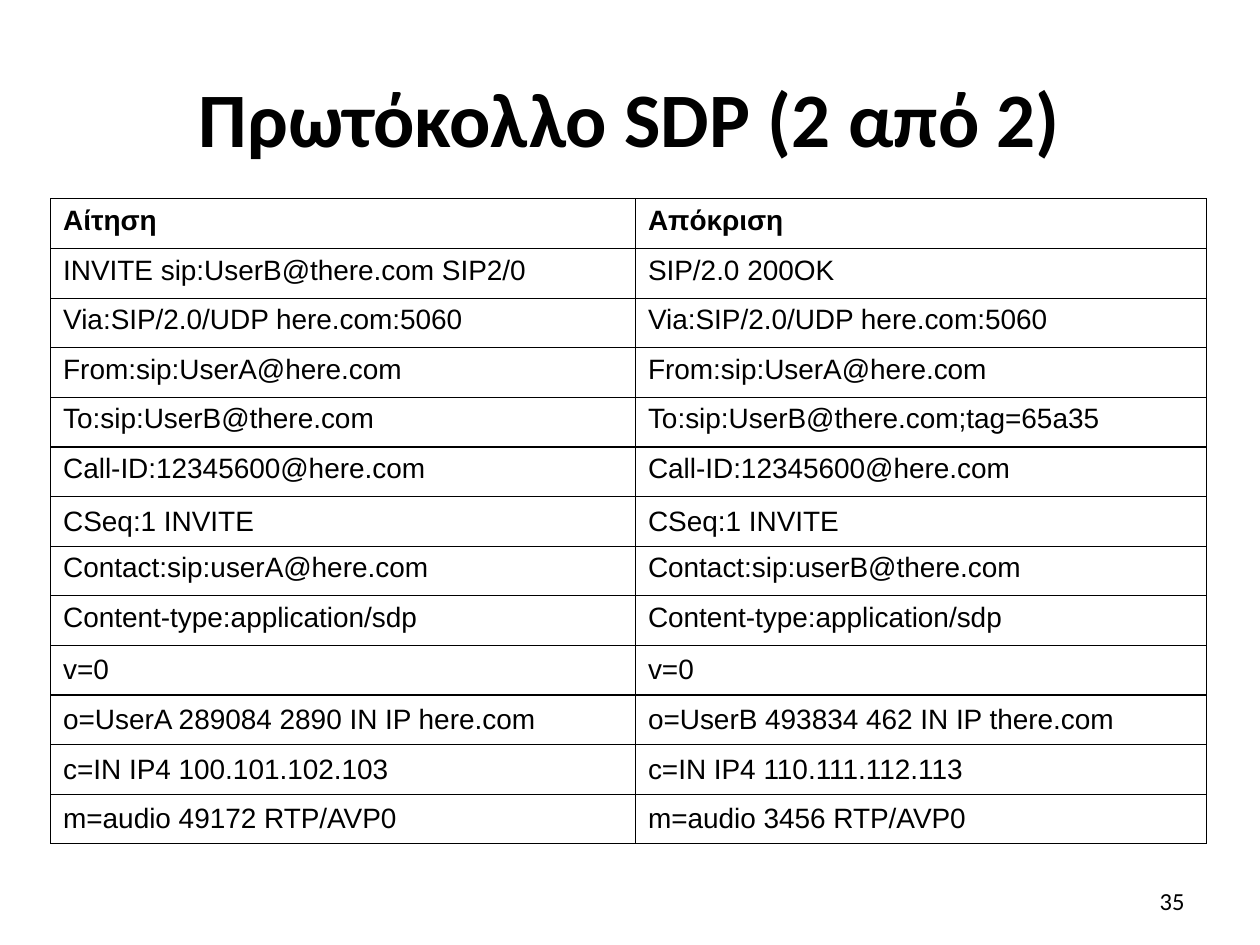
from lxml import etree
from pptx import Presentation
from pptx import util as u
from pptx.dml import color
from pptx.enum import text
from pptx.oxml import ns

BLACK = color.RGBColor(0, 0, 0)
WHITE = color.RGBColor(255, 255, 255)

TITLE = "Πρωτόκολλο SDP (2 από 2)"
PAGE_NUMBER = "35"
HEADER = ("Αίτηση", "Απόκριση")
MESSAGES = [
    ("INVITE sip:UserB@there.com SIP2/0", "SIP/2.0 200OK"),
    ("Via:SIP/2.0/UDP here.com:5060", "Via:SIP/2.0/UDP here.com:5060"),
    ("From:sip:UserA@here.com", "From:sip:UserA@here.com"),
    ("To:sip:UserB@there.com", "To:sip:UserB@there.com;tag=65a35"),
    ("Call-ID:12345600@here.com", "Call-ID:12345600@here.com"),
    ("CSeq:1 INVITE", "CSeq:1 INVITE"),
    ("Contact:sip:userA@here.com", "Contact:sip:userB@there.com"),
    ("Content-type:application/sdp", "Content-type:application/sdp"),
    ("v=0", "v=0"),
    ("o=UserA 289084 2890 IN IP here.com", "o=UserB 493834 462 IN IP there.com"),
    ("c=IN IP4 100.101.102.103", "c=IN IP4 110.111.112.113"),
    ("m=audio 49172 RTP/AVP0", "m=audio 3456 RTP/AVP0"),
]
ROWS = [HEADER] + MESSAGES
CENTRED_ROWS = {6, 9, 10, 11, 12}
COLUMN_WIDTHS = (11.79, 11.51)
ROW_HEIGHT = 1
INDENT = 0.95

TITLE_FONT = {"name": "Calibri", "size": u.Pt(44), "bold": True}
NUMBER_FONT = {"name": "Calibri", "size": u.Pt(14), "bold": False}
HEADER_FONT = {"name": "Arial", "size": u.Pt(16), "bold": True}
CELL_FONT = HEADER_FONT | {"bold": False}


def write(frame, content, font, align, anchor):
    frame.word_wrap = True
    frame.vertical_anchor = anchor
    para = frame.paragraphs[0]
    para.alignment = align
    span = para.add_run()
    span.text = content
    for name, value in font.items():
        setattr(span.font, name, value)
    span.font.color.rgb = BLACK
    return para


def place(box, left, top, width, height):
    for name, value in zip(("left", "top", "width", "height"), (left, top, width, height)):
        setattr(box, name, u.Cm(value))


def add_borders(cell):
    properties = cell._tc.get_or_add_tcPr()
    for side in ("a:lnL", "a:lnR", "a:lnT", "a:lnB"):
        line = etree.SubElement(properties, ns.qn(side), w=str(u.Pt(0.75)))
        fill = etree.SubElement(line, ns.qn("a:solidFill"))
        etree.SubElement(fill, ns.qn("a:srgbClr"), val=str(BLACK))


def add_message_table(page):
    frame = page.shapes.add_table(
        len(ROWS), len(HEADER), u.Cm(1.02), u.Cm(4.01),
        u.Cm(sum(COLUMN_WIDTHS)), u.Cm(ROW_HEIGHT * len(ROWS)))
    table = frame.table
    table.horz_banding = False
    table.first_row = False
    for column, width in zip(table.columns, COLUMN_WIDTHS):
        column.width = u.Cm(width)
    for index, (row, contents) in enumerate(zip(table.rows, ROWS)):
        row.height = u.Cm(ROW_HEIGHT)
        anchor = text.MSO_ANCHOR.MIDDLE if index in CENTRED_ROWS else text.MSO_ANCHOR.TOP
        for cell, content in zip(row.cells, contents):
            font = CELL_FONT if index else HEADER_FONT
            para = write(cell.text_frame, content, font, text.PP_ALIGN.LEFT, anchor)
            cell.vertical_anchor = anchor
            if index:
                layout = para._p.get_or_add_pPr()
                layout.set("marL", str(u.Cm(INDENT)))
                layout.set("indent", str(-u.Cm(INDENT)))
            add_borders(cell)
            cell.fill.background()


def main():
    deck = Presentation()
    deck.slide_width, deck.slide_height = u.Cm(25.4), u.Cm(19.05)
    page = deck.slides.add_slide(deck.slide_layouts[5])
    page.background.fill.solid()
    page.background.fill.fore_color.rgb = WHITE

    title = page.shapes.title
    place(title, 1.27, 0.76, 22.86, 3.18)
    write(title.text_frame, TITLE, TITLE_FONT, text.PP_ALIGN.CENTER, text.MSO_ANCHOR.MIDDLE)

    number = page.shapes.add_textbox(u.Cm(18.21), u.Cm(17.65), u.Cm(5.92), u.Cm(1.02))
    write(number.text_frame, PAGE_NUMBER, NUMBER_FONT, text.PP_ALIGN.RIGHT, text.MSO_ANCHOR.MIDDLE)

    add_message_table(page)
    deck.save("out.pptx")


if __name__ == "__main__":
    main()
